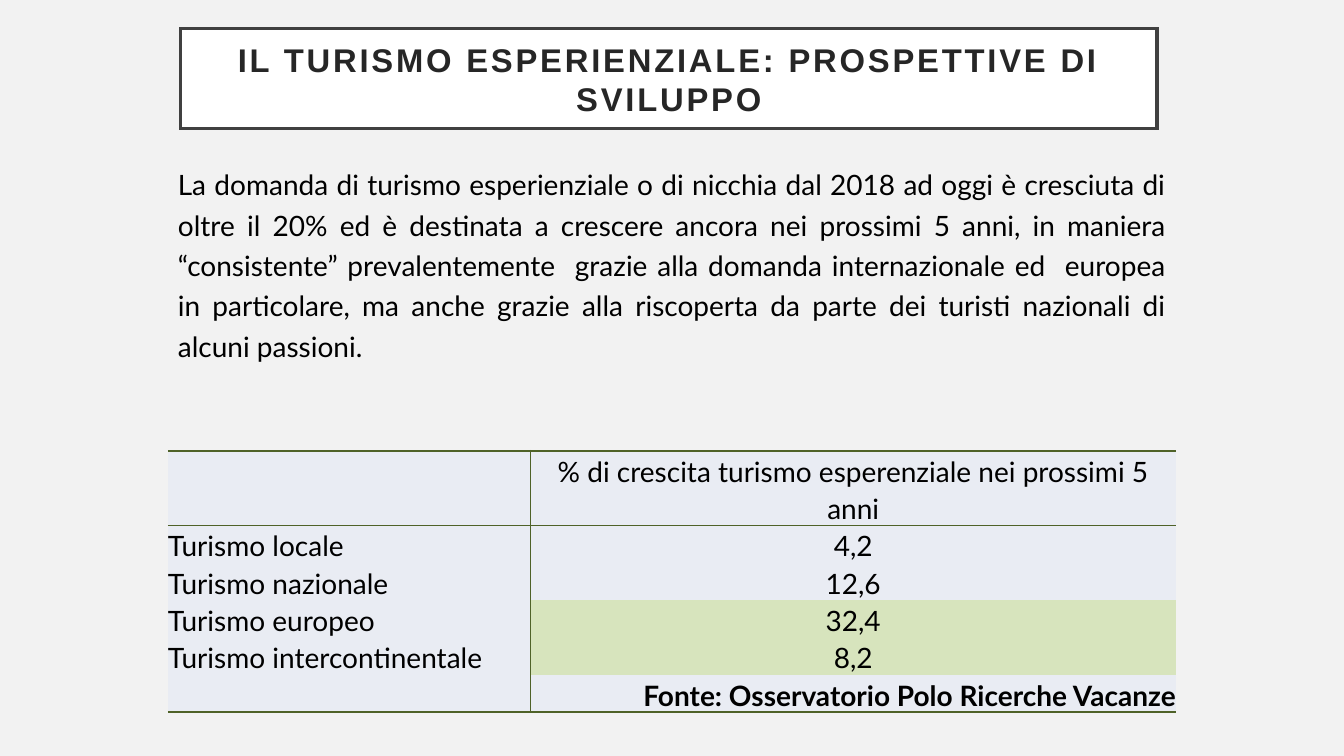
from dataclasses import dataclass

from lxml import etree
from pptx import Presentation
from pptx.dml import color
from pptx.enum import text
from pptx.oxml import ns
from pptx.util import Pt


@dataclass(frozen=True)
class Theme:
    background: str = "F2F2F2"
    white: str = "FFFFFF"
    frame: str = "404040"
    title_ink: str = "262626"
    ink: str = "000000"
    cell: str = "E9ECF3"
    highlight: str = "D7E4BD"
    rule: str = "4F6228"
    title_font: str = "Arial"
    body_font: str = "Lato"
    title_size: float = 23.4
    body_size: float = 20
    thin: float = 0.45
    thick: float = 1.47


@dataclass(frozen=True)
class Row:
    label: str
    value: str
    height: float = 23
    fill: str = Theme.cell
    align: text.PP_ALIGN = text.PP_ALIGN.CENTER
    bold: bool = False
    top: float = 0
    bottom: float = 0


THEME = Theme()
NO_STYLE = "{2D5ABB26-0587-4C30-8999-92F81FD0307C}"
TITLE = "IL TURISMO ESPERIENZIALE: PROSPETTIVE DI SVILUPPO"
INTRO = (
    "La domanda di turismo esperienziale o di nicchia dal 2018 ad oggi è cresciuta di "
    "oltre il 20% ed è destinata a crescere ancora nei prossimi 5 anni, in maniera "
    "“consistente” prevalentemente  grazie alla domanda internazionale ed  europea "
    "in particolare, ma anche grazie alla riscoperta da parte dei turisti nazionali di "
    "alcuni passioni."
)
ROWS = [
    Row("", "% di crescita turismo esperenziale nei prossimi 5 anni", height=47,
        top=THEME.thick, bottom=THEME.thin),
    Row("Turismo locale", "4,2", top=THEME.thin),
    Row("Turismo nazionale", "12,6"),
    Row("Turismo europeo", "32,4", fill=THEME.highlight),
    Row("Turismo intercontinentale", "8,2", fill=THEME.highlight),
    Row("", "Fonte: Osservatorio Polo Ricerche Vacanze",
        align=text.PP_ALIGN.RIGHT, bold=True, bottom=THEME.thick),
]


def rgb(value: str) -> color.RGBColor:
    return color.RGBColor.from_string(value)


def set_font(font, name: str, size: float, ink: str, bold: bool = False) -> None:
    font.name, font.size, font.bold = name, Pt(size), bold
    font.color.rgb = rgb(ink)


def set_margins(frame, across: float, down: float) -> None:
    frame.margin_left = frame.margin_right = Pt(across)
    frame.margin_top = frame.margin_bottom = Pt(down)


def add_border(cell, side: str, width: float) -> None:
    """Sides must be added in the order L, R, T, B, before the fill; 0 means no line."""
    line = etree.SubElement(cell._tc.get_or_add_tcPr(), ns.qn(f"a:ln{side}"),
                            w=str(int(Pt(width))))
    if width:
        solid = etree.SubElement(line, ns.qn("a:solidFill"))
        etree.SubElement(solid, ns.qn("a:srgbClr"), val=THEME.rule)
    else:
        etree.SubElement(line, ns.qn("a:noFill"))


def fill_cell(cell, words: str, align: text.PP_ALIGN, fill: str, bold: bool) -> None:
    cell.fill.solid()
    cell.fill.fore_color.rgb = rgb(fill)
    cell.vertical_anchor = text.MSO_ANCHOR.MIDDLE
    set_margins(cell, 0, 0)
    para = cell.text_frame.paragraphs[0]
    para.text = words
    para.alignment = align
    para.line_spacing = 1.11
    set_font(para.font, THEME.body_font, THEME.body_size, THEME.ink, bold)


def add_title(page) -> None:
    box = page.shapes.title
    box.left, box.top, box.width, box.height = Pt(129), Pt(20.5), Pt(697.5), Pt(71.5)
    box.fill.solid()
    box.fill.fore_color.rgb = rgb(THEME.white)
    box.line.color.rgb = rgb(THEME.frame)
    box.line.width = Pt(2.5)
    # Square corners on the frame
    etree.SubElement(box.line._get_or_add_ln(), ns.qn("a:miter"), lim="800000")
    frame = box.text_frame
    frame.word_wrap = True
    frame.auto_size = text.MSO_AUTO_SIZE.NONE
    frame.vertical_anchor = text.MSO_ANCHOR.MIDDLE
    set_margins(frame, 14.4, 14.4)
    para = frame.paragraphs[0]
    para.alignment = text.PP_ALIGN.CENTER
    span = para.add_run()
    span.text = TITLE
    set_font(para.font, THEME.title_font, THEME.title_size, THEME.title_ink, True)
    span._r.get_or_add_rPr().set("spc", "200")


def add_intro(page) -> None:
    box = page.shapes.add_textbox(Pt(120), Pt(111.5), Pt(720), Pt(150))
    frame = box.text_frame
    frame.word_wrap = True
    set_margins(frame, 7.2, 3.6)
    para = frame.paragraphs[0]
    para.text = INTRO
    para.alignment = text.PP_ALIGN.JUSTIFY
    para.line_spacing = 1.2
    para.space_after = Pt(6)
    set_font(para.font, THEME.body_font, THEME.body_size, THEME.ink)


def add_growth_table(page) -> None:
    height = sum(row.height for row in ROWS)
    holder = page.shapes.add_table(len(ROWS), 2, Pt(120), Pt(322), Pt(720), Pt(height))
    table = holder.table
    table.first_row = table.horz_banding = False
    table._tbl.tblPr.find(ns.qn("a:tableStyleId")).text = NO_STYLE
    for column, width in zip(table.columns, (259, 461)):
        column.width = Pt(width)
    for index, row in enumerate(ROWS):
        table.rows[index].height = Pt(row.height)
        label, value = table.cell(index, 0), table.cell(index, 1)
        # Rules: column divider, then the row's own lines
        for cell, divider in ((label, "R"), (value, "L")):
            add_border(cell, divider, THEME.thin)
            add_border(cell, "T", row.top)
            add_border(cell, "B", row.bottom)
        fill_cell(label, row.label, text.PP_ALIGN.LEFT, THEME.cell, False)
        fill_cell(value, row.value, row.align, row.fill, row.bold)


def main() -> None:
    deck = Presentation()
    deck.slide_width, deck.slide_height = Pt(960), Pt(540)
    page = deck.slides.add_slide(deck.slide_layouts.get_by_name("Title Only"))
    page.background.fill.solid()
    page.background.fill.fore_color.rgb = rgb(THEME.background)
    add_title(page)
    add_intro(page)
    add_growth_table(page)
    deck.save("out.pptx")


if __name__ == "__main__":
    main()
